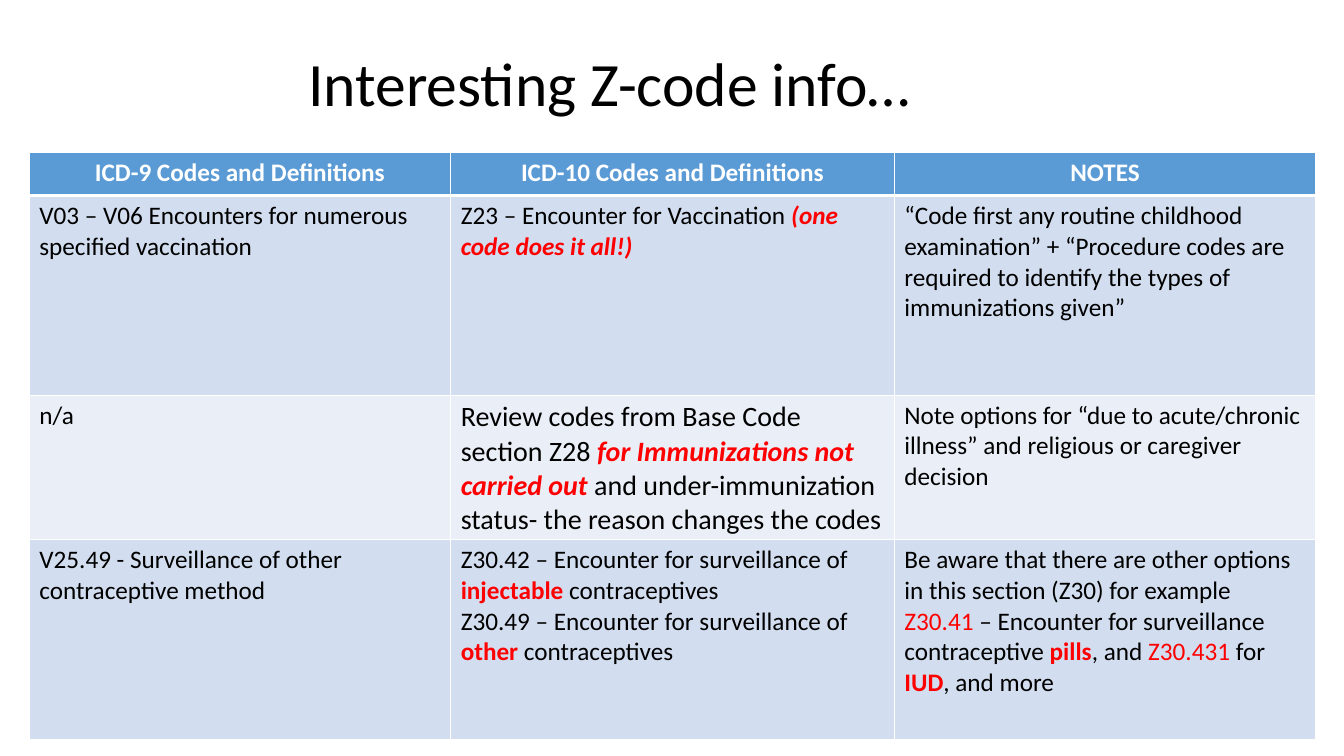
"""Build the slide that compares ICD-9 and ICD-10 codes for Z-code visits."""
from lxml.etree import SubElement
from pptx import Presentation
from pptx.dml.color import RGBColor as RGB
from pptx.enum.text import MSO_ANCHOR as Anchor, PP_ALIGN as Align
from pptx.oxml.ns import qn
from pptx.util import Inches, Pt

COLORS = {"white": "FFFFFF", "black": "000000", "red": "FF0000",
          "header": "5B9BD5", "odd": "D2DEEF", "even": "EAEFF7"}
PLAIN = {"size": Pt(18), "bold": False, "italic": False, "color": "black"}
FORMATS = {
    "plain": PLAIN,
    "title": PLAIN | {"size": Pt(44)},
    "header": PLAIN | {"bold": True, "color": "white"},
    "red": PLAIN | {"color": "red"},
    "strong": PLAIN | {"bold": True, "color": "red"},
    "shout": PLAIN | {"bold": True, "italic": True, "color": "red"},
    "large": PLAIN | {"size": Pt(20)},
    "large shout": {"size": Pt(20), "bold": True, "italic": True, "color": "red"},
}

HEADINGS = ["ICD-9 Codes and Definitions", "ICD-10 Codes and Definitions", "NOTES"]
CODES = [
    [
        [[("V03 – V06 Encounters for numerous specified vaccination", "plain")]],
        [[("Z23 – Encounter for Vaccination ", "plain"),
          ("(one code does it all!)", "shout")]],
        [[("“Code first any routine childhood examination” + “Procedure codes are "
           "required to identify the types of immunizations given”", "plain")]],
    ],
    [
        [[("n/a", "plain")]],
        [[("Review codes from Base Code section Z28 ", "large"),
          ("for Immunizations not carried out ", "large shout"),
          ("and under-immunization status- the reason changes the codes", "large")]],
        [[("Note options for “due to acute/chronic illness” and religious or "
           "caregiver decision", "plain")]],
    ],
    [
        [[("V25.49 - Surveillance of other contraceptive method", "plain")]],
        [[("Z30.42 – Encounter for surveillance of ", "plain"),
          ("injectable", "strong"), (" contraceptives", "plain")],
         [("Z30.49 – Encounter for surveillance of ", "plain"),
          ("other ", "strong"), ("contraceptives", "plain")]],
        [[("Be aware that there are other options in this section (Z30) for example ",
           "plain"),
          ("Z30.41", "red"),
          (" – Encounter for surveillance contraceptive ", "plain"),
          ("pills", "strong"), (", and ", "plain"), ("Z30.431", "red"),
          (" for ", "plain"), ("IUD", "strong"), (", and more", "plain")]],
    ],
]


class SlideBuilder:
    """Hold the text style and the current slide."""

    def __init__(self, slide, font_name):
        self.slide = slide
        self.font_name = font_name

    def add_text(self, frame, paragraphs, **layout):
        """Fill a text frame with paragraphs of (text, format) runs."""
        for index, runs in enumerate(paragraphs):
            paragraph = frame.add_paragraph() if index else frame.paragraphs[0]
            for name, value in layout.items():
                setattr(paragraph, name, value)
            for text, format_name in runs:
                run = paragraph.add_run()
                run.text = text
                run.font.name = self.font_name
                for name, value in FORMATS[format_name].items():
                    if name == "color":
                        run.font.color.rgb = RGB.from_string(COLORS[value])
                    else:
                        setattr(run.font, name, value)

    def title(self, text, left, top, width, height):
        """Add the slide title."""
        box = self.slide.shapes.add_textbox(
            Inches(left), Inches(top), Inches(width), Inches(height))
        box.text_frame.word_wrap = True
        box.text_frame.vertical_anchor = Anchor.MIDDLE
        self.add_text(box.text_frame, [[(text, "title")]], line_spacing=0.9)

    def borders(self, cell, widths):
        """Draw white cell borders of the given widths in points."""
        properties = cell._tc.get_or_add_tcPr()
        for side, width in widths.items():
            line = SubElement(properties, qn(f"a:ln{side}"), w=str(Pt(width)))
            fill = SubElement(line, qn("a:solidFill"))
            SubElement(fill, qn("a:srgbClr"), val=COLORS["white"])

    def cell(self, cell, paragraphs, fill, widths, align):
        """Style and fill one table cell."""
        self.borders(cell, widths)
        cell.fill.solid()
        cell.fill.fore_color.rgb = RGB.from_string(COLORS[fill])
        self.add_text(cell.text_frame, paragraphs, alignment=align)

    def table(self, headings, body, left, top, widths, heights):
        """Add a table with a header row and banded body rows."""
        table = self.slide.shapes.add_table(
            len(heights), len(widths), Inches(left), Inches(top),
            Inches(sum(widths)), Inches(sum(heights))).table
        table.horz_banding = False
        for column, width in zip(table.columns, widths):
            column.width = Inches(width)
        for row, height in zip(table.rows, heights):
            row.height = Inches(height)
        rows = [[[[(heading, "header")]] for heading in headings]] + body
        for row_index, row in enumerate(rows):
            is_header = row_index == 0
            fill = "header" if is_header else "odd" if row_index % 2 else "even"
            align = Align.CENTER if is_header else Align.LEFT
            edges = {"L": 1, "R": 1, "T": 3 if row_index == 1 else 1,
                     "B": 3 if is_header else 1}
            for column_index, paragraphs in enumerate(row):
                self.cell(table.cell(row_index, column_index), paragraphs,
                          fill, edges, align)


def main():
    """Create and save the presentation."""
    deck = Presentation()
    deck.slide_width, deck.slide_height = Inches(13.33), Inches(7.5)
    builder = SlideBuilder(deck.slides.add_slide(deck.slide_layouts[6]), "Calibri")
    builder.title("Interesting Z-code info…", 2.96, 0.4, 9.46, 0.92)
    builder.table(HEADINGS, CODES, 0.29, 1.51,
                  widths=[4.18, 4.4, 4.18], heights=[0.43, 1.98, 1.35, 1.98])
    deck.save("out.pptx")


if __name__ == "__main__":
    main()
